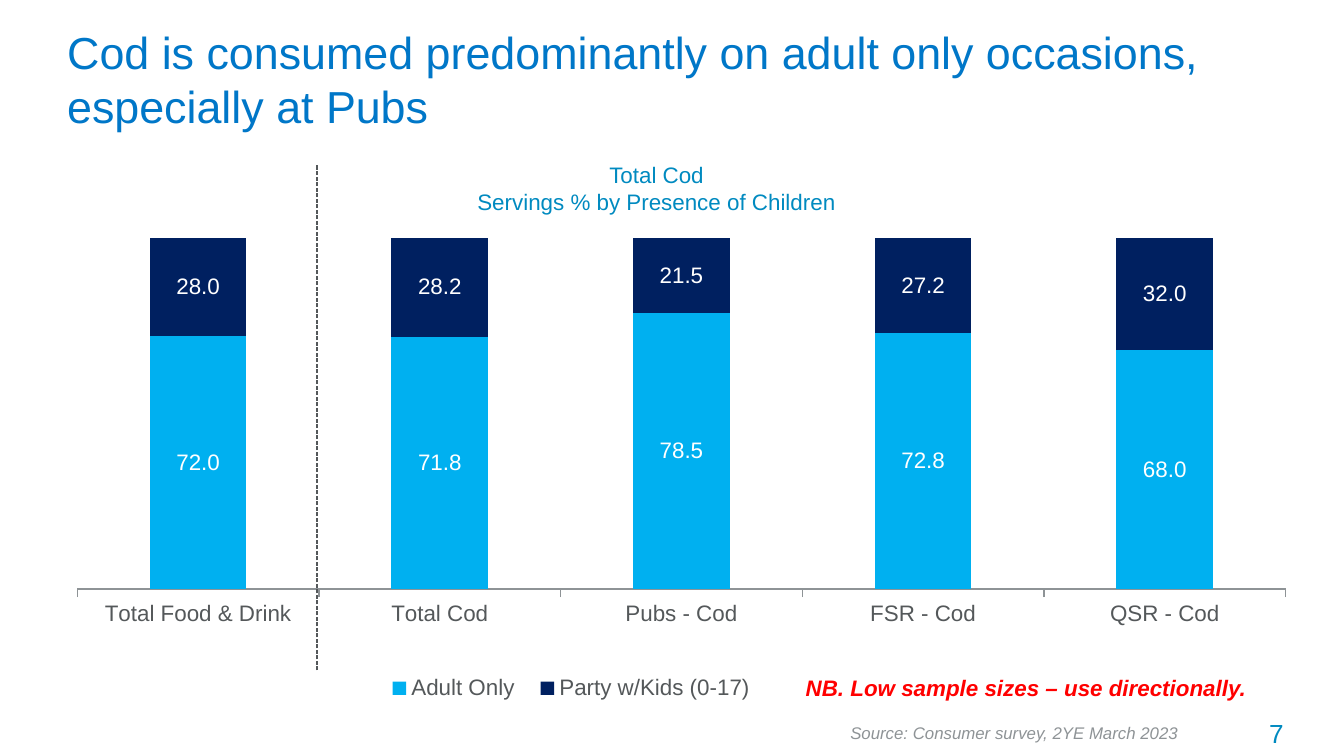
"""Build the slide on cod servings by presence of children."""
from lxml.etree import SubElement
from pptx import Presentation
from pptx.chart.data import CategoryChartData
from pptx.dml.color import RGBColor
from pptx.enum.chart import XL_CHART_TYPE as ChartType, XL_LEGEND_POSITION as LegendPosition
from pptx.enum.chart import XL_TICK_LABEL_POSITION as TickLabels, XL_TICK_MARK as TickMark
from pptx.enum.dml import MSO_LINE_DASH_STYLE as Dash
from pptx.enum.shapes import MSO_CONNECTOR as Connector
from pptx.enum.text import MSO_ANCHOR as Anchor, PP_ALIGN as Align
from pptx.oxml import parse_xml
from pptx.oxml.ns import nsdecls, qn
from pptx.util import Cm, Pt

THEME = {
    "font": "Arial",
    "title": "0077C8", "accent": "008AC0", "text": "54585A", "muted": "8E9396",
    "warning": "FF0000", "label": "FFFFFF",
    "title_size": 24, "number_size": 14, "body_size": 12, "source_size": 9,
}
CATEGORIES = ["Total Food & Drink", "Total Cod", "Pubs - Cod", "FSR - Cod", "QSR - Cod"]
SERIES = [
    ("Adult Only", [72.0, 71.8, 78.5, 72.8, 68.0], "00B0F0"),
    ("Party w/Kids (0-17)", [28.0, 28.2, 21.5, 27.2, 32.0], "002060"),
]
CHART_BOX = (1.02, 3.4, 23.29, 9.96)
PLOT_LAYOUT = {"layoutTarget": "inner", "xMode": "edge", "yMode": "edge",
               "x": 0.019, "y": 0.11, "w": 0.981, "h": 0.667}
LEGEND_LAYOUT = {"xMode": "edge", "yMode": "edge", "x": 0.26, "y": 0.93, "w": 0.32, "h": 0.07}
DIVIDER = (5.99, 12.67, 5.99, 3.12)
TEXTS = [
    {"text": "Cod is consumed predominantly on adult only occasions, especially at Pubs",
     "box": (1.02, 0.58, 23.29, 1.8), "size": "title_size", "color": "title",
     "anchor": Anchor.MIDDLE},
    {"text": "Total Cod\nServings % by Presence of Children",
     "box": (8.74, 2.92, 7.34, 1.27), "size": "body_size", "color": "accent",
     "align": Align.CENTER, "wrap": False},
    {"text": "7", "box": (22.48, 13.44, 2.03, 0.86), "size": "number_size", "color": "accent",
     "align": Align.RIGHT},
    {"text": "NB. Low sample sizes – use directionally.",
     "box": (14.48, 12.62, 9.83, 0.76), "size": "body_size", "color": "warning",
     "align": Align.CENTER, "bold": True, "italic": True},
    {"text": "Source: Consumer survey, 2YE March 2023",
     "box": (15.82, 13.54, 6.78, 0.64), "size": "source_size", "color": "muted",
     "italic": True, "wrap": False},
]


def color(name):
    return RGBColor.from_string(THEME.get(name, name))


def style_font(font, size, color_name, bold=False, italic=False):
    font.name = THEME["font"]
    font.size = Pt(THEME[size])
    font.color.rgb = color(color_name)
    font.bold, font.italic = bold, italic


def set_layout(element, index, values):
    for previous in element.findall(qn("c:layout")):
        element.remove(previous)
    layout = parse_xml(f"<c:layout {nsdecls('c')}><c:manualLayout/></c:layout>")
    for name, value in values.items():
        SubElement(layout[0], qn(f"c:{name}")).set("val", str(value))
    element.insert(index, layout)


def add_text(slide, item):
    frame = slide.shapes.add_textbox(*map(Cm, item["box"])).text_frame
    frame.word_wrap = item.get("wrap", True)
    frame.vertical_anchor = item.get("anchor", Anchor.TOP)
    frame.text = item["text"]
    for paragraph in frame.paragraphs:
        paragraph.alignment = item.get("align", Align.LEFT)
        for run in paragraph.runs:
            style_font(run.font, item["size"], item["color"],
                       item.get("bold", False), item.get("italic", False))


def add_servings_chart(slide):
    data = CategoryChartData(number_format="#,##0.0")
    data.categories = CATEGORIES
    for name, values, _ in SERIES:
        data.add_series(name, values)
    chart = slide.shapes.add_chart(
        ChartType.COLUMN_STACKED_100, *map(Cm, CHART_BOX), data).chart
    style_font(chart.font, "body_size", "text")
    chart.has_title = False

    plot = chart.plots[0]
    plot.gap_width, plot.overlap = 150, 100
    plot.vary_by_categories = False
    for series, (_, _, fill_color) in zip(plot.series, SERIES):
        series.format.fill.solid()
        series.format.fill.fore_color.rgb = color(fill_color)
        labels = series.data_labels
        labels.show_value = True
        labels.number_format = "#,##0.0"
        labels.number_format_is_linked = False
        style_font(labels.font, "body_size", "label")

    chart.value_axis.visible = False
    chart.value_axis.has_major_gridlines = False
    axis = chart.category_axis
    axis.major_tick_mark = TickMark.OUTSIDE
    axis.tick_label_position = TickLabels.LOW
    axis.format.line.color.rgb = color("muted")
    axis.format.line.width = Pt(0.75)

    chart.has_legend = True
    chart.legend.position = LegendPosition.BOTTOM
    chart.legend.include_in_layout = False
    style_font(chart.legend.font, "body_size", "text")
    root = chart.element
    set_layout(root.find(f".//{qn('c:plotArea')}"), 0, PLOT_LAYOUT)
    set_layout(root.find(f".//{qn('c:legend')}"), 1, LEGEND_LAYOUT)


def add_divider(slide):
    divider = slide.shapes.add_connector(Connector.STRAIGHT, *map(Cm, DIVIDER))
    divider.line.color.rgb = color("text")
    divider.line.width = Pt(0.75)
    divider.line.dash_style = Dash.SQUARE_DOT
    SubElement(divider.element.spPr, qn("a:effectLst"))


def main():
    presentation = Presentation()
    presentation.slide_width, presentation.slide_height = Cm(25.4), Cm(14.29)
    slide = presentation.slides.add_slide(presentation.slide_layouts[6])
    add_servings_chart(slide)
    add_divider(slide)
    for item in TEXTS:
        add_text(slide, item)
    presentation.save("out.pptx")


if __name__ == "__main__":
    main()
